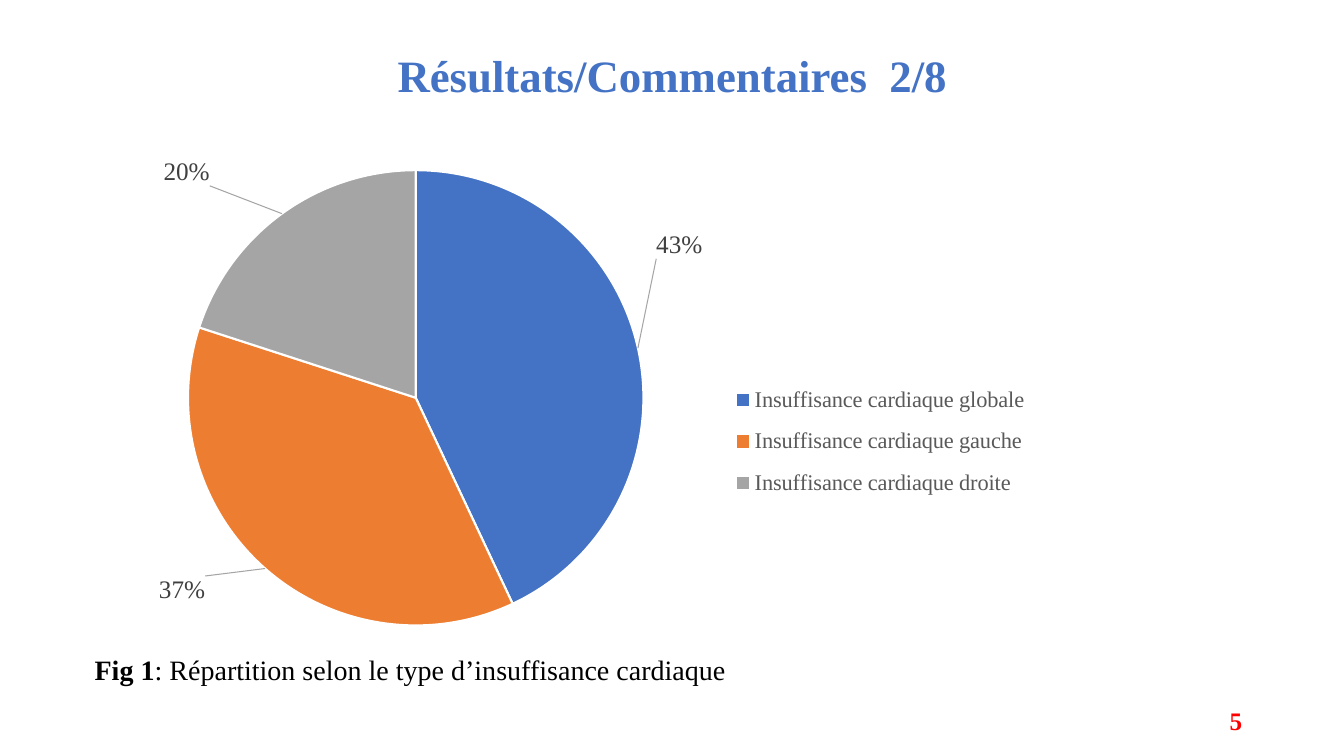
from pptx import Presentation
from pptx import util as u
from pptx.chart.data import CategoryChartData
from pptx.dml.color import RGBColor
from pptx.enum import chart as charts, text
from pptx.oxml import parse_xml
from pptx.oxml.ns import nsdecls

FONT = "Times New Roman"
COLORS = {
    "blue": "4472C4", "orange": "ED7D31", "grey": "A5A5A5", "white": "FFFFFF",
    "black": "000000", "red": "FF0000", "legend": "595959", "label": "404040",
}
# Category, share, slice colour, label shift as a fraction of the chart
SLICES = [
    ("Insuffisance cardiaque globale", 43, "blue", (0.013, -0.176)),
    ("Insuffisance cardiaque gauche", 37, "orange", (-0.058, 0.006)),
    ("Insuffisance cardiaque droite", 20, "grey", (-0.071, -0.046)),
]


def rgb(name):
    return RGBColor.from_string(COLORS[name])


def format_font(font, size, color, bold=False):
    values = {"name": FONT, "size": u.Pt(size), "bold": bold}
    for name, value in values.items():
        setattr(font, name, value)
    font.color.rgb = rgb(color)


def add_text(page, place, spans, size, color, **paragraph_format):
    """Add a one-paragraph box; spans holds (wording, bold) pairs."""
    box = page.shapes.add_textbox(*map(u.Inches, place))
    box.text_frame.word_wrap = True
    box.text_frame.vertical_anchor = text.MSO_ANCHOR.MIDDLE
    para = box.text_frame.paragraphs[0]
    for name, value in paragraph_format.items():
        setattr(para, name, value)
    for wording, bold in spans:
        span = para.add_run()
        span.text = wording
        format_font(span.font, size, color, bold)


def manual_layout(x, y, width=None, height=None, inner=False):
    """Return a chart layout element, in fractions of the chart."""
    parts = ['<c:layoutTarget val="inner"/>'] if inner else []
    if width:
        parts += ['<c:xMode val="edge"/>', '<c:yMode val="edge"/>']
    sizes = {"x": x, "y": y, "w": width, "h": height}
    parts += [f'<c:{key} val="{value}"/>' for key, value in sizes.items() if value is not None]
    return parse_xml(
        f'<c:layout {nsdecls("c")}><c:manualLayout>{"".join(parts)}</c:manualLayout></c:layout>'
    )


def set_layout(parent, layout, after=None):
    """Put the layout in place of any present one, after the given child."""
    for old in parent.xpath("c:layout"):
        parent.remove(old)
    if after is None:
        parent.insert(0, layout)
    else:
        parent.xpath(after)[0].addnext(layout)


def format_labels(series):
    labels = series.data_labels
    values = {
        "show_percentage": True, "show_value": False,
        "number_format": "0%", "number_format_is_linked": False,
        "position": charts.XL_LABEL_POSITION.OUTSIDE_END,
    }
    for name, value in values.items():
        setattr(labels, name, value)
    format_font(labels.font, 18, "label")
    series_labels = series._element.xpath("c:dLbls")[0]
    series_labels.append(parse_xml(
        f'<c:leaderLines {nsdecls("c", "a")}><c:spPr><a:ln w="9525"><a:solidFill>'
        f'<a:srgbClr val="{COLORS["grey"]}"/></a:solidFill></a:ln></c:spPr></c:leaderLines>'
    ))
    for index, (_, _, _, shift) in enumerate(SLICES):
        label = series.points[index].data_label
        format_font(label.font, 18, "label")
        label.position = charts.XL_LABEL_POSITION.OUTSIDE_END
        element = series_labels.xpath(f"c:dLbl[c:idx/@val='{index}']")[0]
        element.xpath("c:showVal")[0].set("val", "0")
        element.xpath("c:showPercent")[0].set("val", "1")
        set_layout(element, manual_layout(*shift), after="c:idx")


def add_pie(page, place):
    data = CategoryChartData()
    data.categories = [category for category, *_ in SLICES]
    data.add_series("Series 1", [share for _, share, *_ in SLICES])
    chart = page.shapes.add_chart(
        charts.XL_CHART_TYPE.PIE, *map(u.Inches, place), data
    ).chart
    format_font(chart.font, 10, "black")
    chart.has_title = False
    chart.has_legend = True
    chart.legend.position = charts.XL_LEGEND_POSITION.RIGHT
    chart.legend.include_in_layout = False
    format_font(chart.legend.font, 16, "legend")
    set_layout(chart.legend._element, manual_layout(0.64, 0.45, 0.32, 0.28), after="c:legendPos")
    plot = chart.plots[0]
    plot.vary_by_categories = True
    series = plot.series[0]
    for index, (_, _, color, _) in enumerate(SLICES):
        part = series.points[index].format
        part.fill.solid()
        part.fill.fore_color.rgb = rgb(color)
        part.line.color.rgb = rgb("white")
        part.line.width = u.Pt(1.5)
    format_labels(series)
    plot_area = chart._chartSpace.xpath("c:chart/c:plotArea")[0]
    set_layout(plot_area, manual_layout(0.084, 0.048, 0.471, 0.909, inner=True))


def main():
    deck = Presentation()
    deck.slide_width, deck.slide_height = u.Inches(13.33), u.Inches(7.5)
    page = deck.slides.add_slide(deck.slide_layouts[6])
    add_text(page, (0.92, 0.4, 11.5, 0.75), [("Résultats/Commentaires  2/8", True)],
             32, "blue", alignment=text.PP_ALIGN.CENTER, line_spacing=0.9)
    add_pie(page, (1.06, 1.45, 9.59, 4.97))
    add_text(page, (0.84, 6.42, 6.48, 0.44),
             [("Fig 1", True), (": Répartition selon le type d’insuffisance cardiaque", False)],
             20, "black")
    add_text(page, (9.42, 6.95, 3, 0.4), [("5", True)], 18, "red",
             alignment=text.PP_ALIGN.RIGHT)
    deck.save("out.pptx")


if __name__ == "__main__":
    main()
